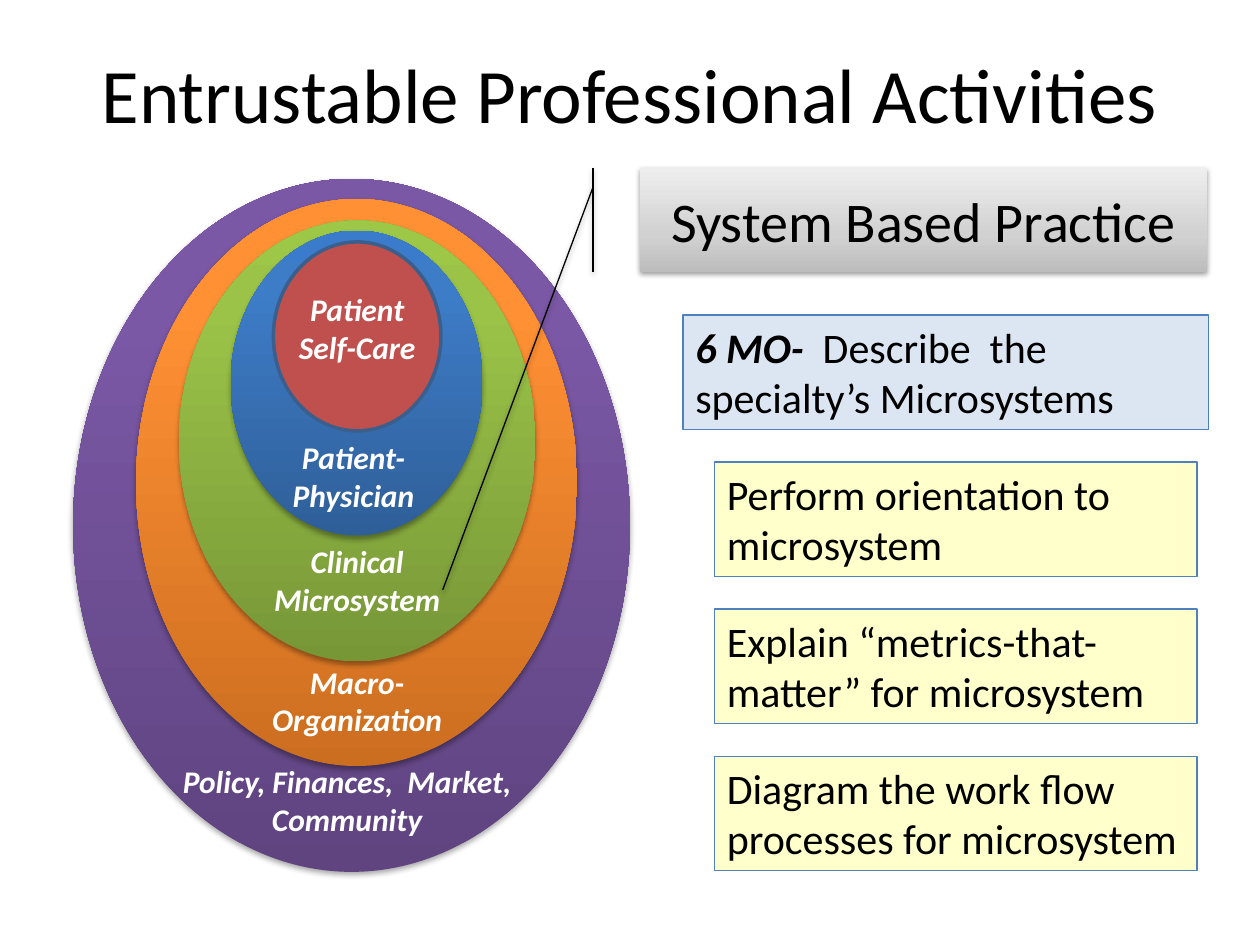
from copy import deepcopy

from lxml.etree import SubElement
from pptx import Presentation
from pptx.dml.color import RGBColor
from pptx.enum.shapes import MSO_SHAPE
from pptx.enum.text import MSO_ANCHOR, PP_ALIGN
from pptx.oxml.ns import qn
from pptx.util import Inches, Pt

FONT = "Calibri"
COLORS = {
    "text": "000000",
    "ring text": "FFFFFF",
    "core": "C0504D",
    "core line": "3A5F8C",
    "box line": "4F81BD",
    "milestone": "DCE6F2",
    "activity": "FFFFCC",
}
TITLE = "Entrustable Professional Activities"

# left, top, width, height, gradient stops from bottom to top
RINGS = [
    (0.58, 1.42, 4.42, 5.5, [(0, "5F4480"), (0.8, "7B58A6"), (1, "7C57A8")]),
    (1.08, 1.58, 3.5, 4.5, [(0, "CC6E20"), (0.8, "FF9034"), (1, "FF9136")]),
    (1.42, 1.75, 2.83, 3.5, [(0, "779737"), (0.8, "9BC348"), (1, "9DC746")]),
    (1.83, 1.83, 2, 2.42, [(0, "2F5F99"), (0.8, "3D7CC7"), (1, "3A7CCB")]),
]
CORE = (2.17, 1.92, 1.33, 1.5)

# text, left, top, width
RING_LABELS = [
    ("Patient-Physician", 2, 3.43, 1.61),
    ("Clinical Microsystem", 2, 4.25, 1.67),
    ("Macro- Organization", 2, 5.21, 1.67),
    ("Policy, Finances,  Market, Community", 1.17, 6, 3.17),
    ("Patient Self-Care", 2.17, 2.25, 1.33),
]
LABEL_HEIGHT = 0.71

CALLOUT = "System Based Practice"
CALLOUT_AREA = (5.08, 1.33, 4.5, 0.83)
CALLOUT_STOPS = [(0, "BDBDBD"), (0.35, "D1D1D1"), (1, "EEEEEE")]
CALLOUT_POINTER = (0.188, -0.083, 4.039, -0.348)

MILESTONE = [("6 MO-  ", True), ("Describe  the specialty’s Microsystems", False)]
ACTIVITIES = [
    "Perform orientation to microsystem",
    "Explain “metrics-that-matter” for microsystem",
    "Diagram the work flow processes for microsystem",
]
BOX_HEIGHT = 0.91
BOX_TOP, BOX_STEP = 2.5, 1.167


def rgb(color):
    return RGBColor.from_string(color)


def add_shape(slide, kind, area, fill=None, line=None, line_width=0.75):
    shape = slide.shapes.add_shape(kind, *map(Inches, area))
    shape.shadow.inherit = False
    if fill:
        shape.fill.solid()
        shape.fill.fore_color.rgb = rgb(fill)
    if line:
        shape.line.color.rgb = rgb(line)
        shape.line.width = Pt(line_width)
    else:
        shape.line.fill.background()
    return shape


def set_gradient(shape, stops):
    """Fill the shape from bottom to top with the given stops."""
    shape.fill.gradient()
    shape.fill.gradient_angle = 90
    stop_list = shape._element.spPr.find(".//" + qn("a:gsLst"))
    while len(stop_list) < len(stops):
        stop_list.append(deepcopy(stop_list[0]))
    for stop, (position, color) in zip(shape.fill.gradient_stops, stops):
        stop.position = position
        stop.color.rgb = rgb(color)


def add_drop_shadow(shape, distance, opacity):
    effects = shape._element.spPr.find(qn("a:effectLst"))
    shadow = SubElement(effects, qn("a:outerShdw"), blurRad=str(Pt(3.1)),
                        dist=str(Pt(distance)), dir="5400000", rotWithShape="0")
    color = SubElement(shadow, qn("a:srgbClr"), val="000000")
    SubElement(color, qn("a:alpha"), val=str(opacity * 1000))


def write(shape, runs, size, color=COLORS["text"], align=PP_ALIGN.LEFT,
          anchor=MSO_ANCHOR.TOP):
    """Write (text, emphasised) runs as one wrapped paragraph."""
    frame = shape.text_frame
    frame.word_wrap = True
    frame.vertical_anchor = anchor
    paragraph = frame.paragraphs[0]
    paragraph.alignment = align
    paragraph.font.name = FONT
    paragraph.font.size = Pt(size)
    paragraph.font.color.rgb = rgb(color)
    for text, emphasised in runs:
        run = paragraph.add_run()
        run.text = text
        run.font.name = FONT
        run.font.size = Pt(size)
        run.font.color.rgb = rgb(color)
        run.font.bold = run.font.italic = emphasised


def add_rings(slide):
    for *area, stops in RINGS:
        ring = add_shape(slide, MSO_SHAPE.OVAL, area)
        set_gradient(ring, stops)
        add_drop_shadow(ring, 1.8, 35)
    add_shape(slide, MSO_SHAPE.OVAL, CORE, COLORS["core"], COLORS["core line"], 2)
    for text, left, top, width in RING_LABELS:
        label = slide.shapes.add_textbox(*map(Inches, (left, top, width, LABEL_HEIGHT)))
        write(label, [(text, True)], 18, COLORS["ring text"], PP_ALIGN.CENTER)


def add_callout(slide):
    callout = add_shape(slide, MSO_SHAPE.LINE_CALLOUT_1_ACCENT_BAR, CALLOUT_AREA,
                        line=COLORS["text"])
    for index, value in enumerate(CALLOUT_POINTER):
        callout.adjustments[index] = value
    set_gradient(callout, CALLOUT_STOPS)
    add_drop_shadow(callout, 1.6, 38)
    write(callout, [(CALLOUT, False)], 32, align=PP_ALIGN.CENTER,
          anchor=MSO_ANCHOR.MIDDLE)


def add_boxes(slide):
    boxes = [(MILESTONE, 5.42, 4.17, "milestone")]
    boxes += [([(text, False)], 5.67, 3.83, "activity") for text in ACTIVITIES]
    for row, (runs, left, width, fill) in enumerate(boxes):
        area = (left, BOX_TOP + row * BOX_STEP, width, BOX_HEIGHT)
        box = add_shape(slide, MSO_SHAPE.RECTANGLE, area, COLORS[fill],
                        COLORS["box line"])
        write(box, runs, 24)


def main():
    presentation = Presentation()
    presentation.slide_width = Inches(10)
    presentation.slide_height = Inches(7.5)
    slide = presentation.slides.add_slide(presentation.slide_layouts[6])
    title = slide.shapes.add_textbox(*map(Inches, (0.5, 0.3, 9, 0.87)))
    write(title, [(TITLE, False)], 44, align=PP_ALIGN.CENTER, anchor=MSO_ANCHOR.MIDDLE)
    add_rings(slide)
    add_callout(slide)
    add_boxes(slide)
    presentation.save("out.pptx")


if __name__ == "__main__":
    main()
